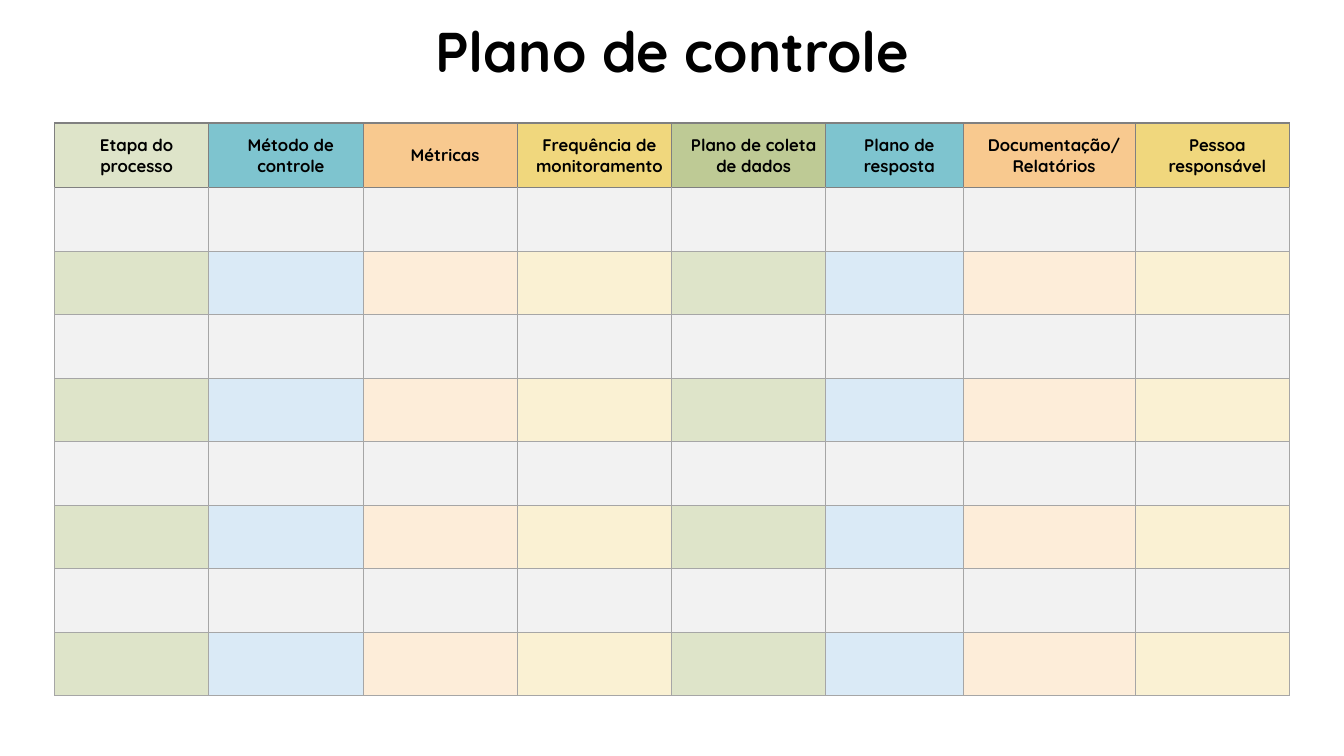
"""Build a control plan slide: a title above an eight-column planning table."""
from lxml.etree import SubElement
from pptx import Presentation
from pptx.dml.color import RGBColor
from pptx.enum.text import MSO_ANCHOR, PP_ALIGN
from pptx.oxml.ns import qn
from pptx.util import Inches, Pt

FONT = "Quicksand"
HEADERS = [
    ("Etapa do processo", "DEE4C9"),
    ("Método de controle", "7EC4CF"),
    ("Métricas", "F8C98F"),
    ("Frequência de monitoramento", "F0D77D"),
    ("Plano de coleta de dados", "BECA95"),
    ("Plano de resposta", "7EC4CF"),
    ("Documentação/\nRelatórios", "F8C98F"),
    ("Pessoa responsável", "F0D77D"),
]
TINTS = ["DEE4C9", "DAEAF6", "FDEDD9", "FAF1D3"]
PLAIN = "F2F2F2"
HEADER_EDGE, BODY_EDGE = "808080", "A6A6A6"
COLUMN_WIDTHS = [1.53] * 5 + [1.36, 1.71, 1.53]
ROW_HEIGHTS = [0.64] + [0.63] * 8


def write(para, text, size):
    """Add bold black centred text, one run per line."""
    para.alignment = PP_ALIGN.CENTER
    for number, line in enumerate(text.split("\n")):
        if number:
            para.add_line_break()
        span = para.add_run()
        span.text = line
        span.font.name = FONT
        span.font.size = Pt(size)
        span.font.bold = True
        span.font.color.rgb = RGBColor.from_string("000000")


def style_cell(cell, fill, edges):
    """Draw the borders of a cell, then fill it."""
    properties = cell._tc.get_or_add_tcPr()
    for side, (color, width) in edges.items():
        line = SubElement(properties, qn(f"a:ln{side}"), w=str(Pt(width)))
        SubElement(SubElement(line, qn("a:solidFill")), qn("a:srgbClr"), val=color)
    cell.fill.solid()
    cell.fill.fore_color.rgb = RGBColor.from_string(fill)


deck = Presentation()
deck.slide_width, deck.slide_height = Inches(13.33), Inches(7.5)
page = deck.slides.add_slide(deck.slide_layouts[6])

frame = page.shapes.add_table(
    len(ROW_HEIGHTS), len(COLUMN_WIDTHS), Inches(0.54), Inches(1.22),
    Inches(sum(COLUMN_WIDTHS)), Inches(sum(ROW_HEIGHTS)))
table = frame.table
table.horz_banding = False
for column, width in zip(table.columns, COLUMN_WIDTHS):
    column.width = Inches(width)
for row, height in zip(table.rows, ROW_HEIGHTS):
    row.height = Inches(height)

for row in range(len(ROW_HEIGHTS)):
    for column, (heading, header_fill) in enumerate(HEADERS):
        cell = table.cell(row, column)
        edge = BODY_EDGE if row else HEADER_EDGE
        edges = {side: (edge, 0.5) for side in "LRTB"}
        if row == 0:
            edges["T"] = (HEADER_EDGE, 1.5)
            fill = header_fill
            cell.vertical_anchor = MSO_ANCHOR.MIDDLE
            cell.margin_left = Inches(0.1)
            cell.margin_right = cell.margin_top = cell.margin_bottom = 0
            write(cell.text_frame.paragraphs[0], heading, 12)
        else:
            if row == 1:
                edges["T"] = (HEADER_EDGE, 0.5)
            fill = PLAIN if row % 2 else TINTS[column % len(TINTS)]
        style_cell(cell, fill, edges)

title = page.shapes.add_textbox(Inches(3.76), 0, Inches(5.81), Inches(1.08))
title.text_frame.word_wrap = True
title.text_frame.vertical_anchor = MSO_ANCHOR.MIDDLE
para = title.text_frame.paragraphs[0]
para.line_spacing = 0.9
write(para, "Plano de controle", 40)

deck.save("out.pptx")
